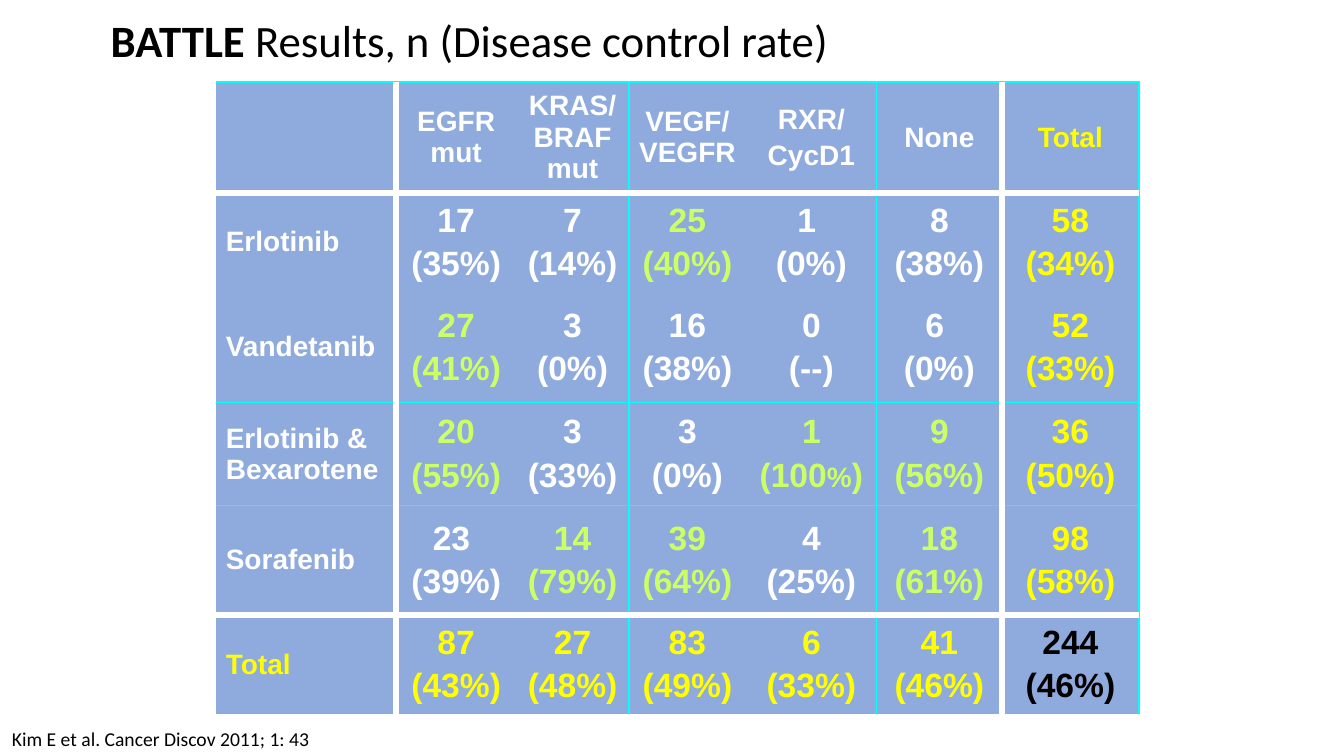
from lxml.etree import SubElement
from pptx import Presentation
from pptx.dml.color import RGBColor
from pptx.enum.shapes import MSO_CONNECTOR as Link
from pptx.enum.text import MSO_ANCHOR as Anchor, PP_ALIGN as Align
from pptx.oxml.ns import qn
from pptx.util import Pt

WHITE, BLACK, YELLOW, LIME = "FFFFFF", "000000", "FFFF00", "CCFF66"
BLUE, CYAN = "8FAADC", "00FFFF"


def paint(text):
    return RGBColor.from_string(text)


class Board:
    """Style and current slide."""
    head, body = "Calibri", "Arial"
    small, large = 20, 24

    def __init__(self, slide):
        self.slide = slide

    def run(self, para, text, size, color, bold=False, face=None):
        run = para.add_run()
        run.text = text
        font = run.font
        font.name, font.size, font.bold = face or self.body, Pt(size), bold
        font.color.rgb = paint(color)

    def label(self, box, runs, size, wrap=True, space=1.0):
        frame = self.slide.shapes.add_textbox(*map(Pt, box)).text_frame
        frame.word_wrap = wrap
        frame.vertical_anchor = Anchor.MIDDLE
        para = frame.paragraphs[0]
        para.line_spacing = space
        for text, bold in runs:
            self.run(para, text, size, BLACK, bold, self.head)

    def rule(self, x1, y1, x2, y2):
        line = self.slide.shapes.add_connector(
            Link.STRAIGHT, *map(Pt, (x1, y1, x2, y2)))
        line.line.color.rgb = paint(WHITE)
        line.line.width = Pt(4.5)
        SubElement(line._element.spPr, qn("a:effectLst"))

    def grid(self, left, top, cols, rows):
        table = self.slide.shapes.add_table(
            len(rows), len(cols), Pt(left), Pt(top),
            Pt(sum(cols)), Pt(sum(rows))).table
        table.first_row = table.horz_banding = False
        for col, width in zip(table.columns, cols):
            col.width = Pt(width)
        for row, height in zip(table.rows, rows):
            row.height = Pt(height)
        return table

    def edge(self, cell, side, shown):
        line = SubElement(cell._tc.get_or_add_tcPr(), qn("a:ln" + side))
        line.set("w", str(Pt(1) if shown else 0))
        if shown:
            fill = SubElement(line, qn("a:solidFill"))
            SubElement(fill, qn("a:srgbClr")).set("val", CYAN)
        else:
            SubElement(line, qn("a:noFill"))

    def cell(self, cell, paras, color, align, edges):
        """Each paragraph is a list of (text, size) runs."""
        for side, shown in edges.items():
            self.edge(cell, side, shown)
        cell.fill.solid()
        cell.fill.fore_color.rgb = paint(BLUE)
        cell.vertical_anchor = Anchor.MIDDLE
        frame = cell.text_frame
        for i, runs in enumerate(paras):
            para = frame.add_paragraph() if i else frame.paragraphs[0]
            para.alignment = align
            if i:
                para.space_before = Pt(runs[0][1] / 6)
            for text, size in runs:
                self.run(para, text, size, color, True)


# Results: a count and a rate per cell
HEADS = ["", "EGFR mut", "KRAS/BRAF mut", "VEGF/VEGFR", "RXR/|CycD1",
         "None", "Total"]
DATA = [
    ["Erlotinib", "17|(35%)", "7|(14%)", "25|(40%)", "1 |(0%)", "8|(38%)",
     "58|(34%)"],
    ["Vandetanib", "27|(41%)", "3|(0%)", "16|(38%)", "0|(--)", "6 |(0%)",
     "52|(33%)"],
    ["Erlotinib & Bexarotene", "20|(55%)", "3|(33%)", "3|(0%)", "1|(100%)",
     "9|(56%)", "36|(50%)"],
    ["Sorafenib", "23 |(39%)", "14|(79%)", "39|(64%)", "4|(25%)", "18|(61%)",
     "98|(58%)"],
    ["Total", "87|(43%)", "27|(48%)", "83|(49%)", "6|(33%)", "41|(46%)",
     "244|(46%)"],
]
BEST = {(1, 3), (2, 1), (3, 1), (3, 4), (3, 5), (4, 2), (4, 3), (4, 5)}
LEFT, TOP = 154.1, 58.5
COLS = [128.9, 85.7, 80.6, 83.5, 93.6, 89.3, 97.9]
ROWS = [79.2, 70.6, 79.2, 73.4, 78.5, 70.6]
# Grid lines drawn in cyan, counted from the left and from the top
DOWN, ACROSS = {3, 5, 7}, {0, 3, 4}


def shade(r, c):
    last = (r == len(ROWS) - 1) + (c == len(COLS) - 1)
    if last:
        return BLACK if last == 2 else YELLOW
    return LIME if (r, c) in BEST else WHITE


def split(text, size):
    if text == "(100%)":
        return [("(100", size), ("%", Board.small), (")", size)]
    return [(text, size)]


def main():
    deck = Presentation()
    deck.slide_width, deck.slide_height = Pt(960), Pt(540)
    board = Board(deck.slides.add_slide(deck.slide_layouts[6]))

    # Table
    table = board.grid(LEFT, TOP, COLS, ROWS)
    for r, row in enumerate([HEADS] + DATA):
        for c, text in enumerate(row):
            size = board.large if r and c else board.small
            paras = [split(part, size) for part in text.split("|")]
            edges = {"L": c in DOWN, "R": c + 1 in DOWN,
                     "T": r in ACROSS, "B": r + 1 in ACROSS}
            align = Align.CENTER if c else Align.LEFT
            board.cell(table.cell(r, c), paras, shade(r, c), align, edges)

    # White rules that set off the heads and the totals
    right, base = LEFT + sum(COLS), TOP + sum(ROWS)
    for y in (TOP + sum(ROWS[:-1]), TOP + ROWS[0]):
        board.rule(LEFT, y, right, y)
    for x in (LEFT + sum(COLS[:-1]), LEFT + COLS[0]):
        board.rule(x, TOP, x, base)

    # Title and citation
    board.label((72, 0, 816, 61.2),
                [("BATTLE", True), (" Results, n (Disease control rate)", False)],
                32, space=0.9)
    board.label((1.4, 515.5, 229, 24.2),
                [("Kim E et al. Cancer Discov 2011; 1: 43", False)],
                14, wrap=False)

    deck.save("out.pptx")


if __name__ == "__main__":
    main()
